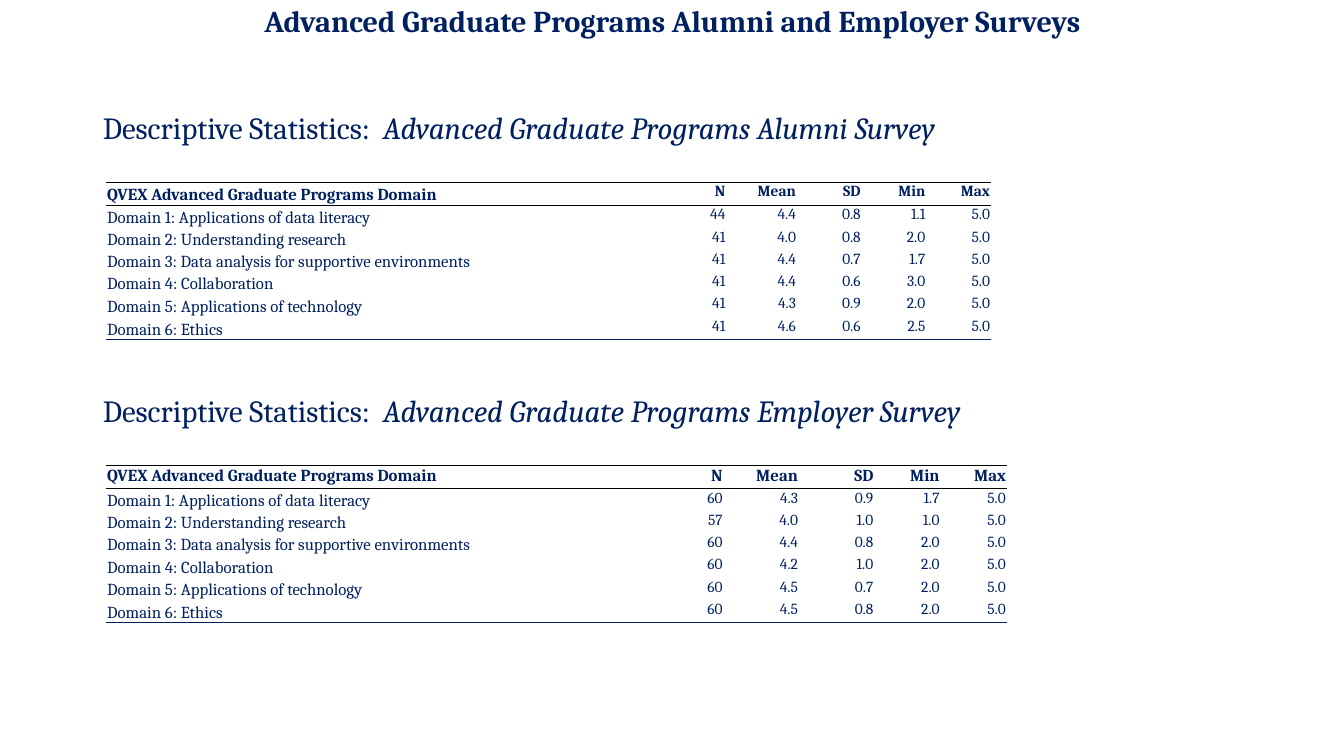
from lxml.etree import SubElement
from pptx import Presentation
from pptx.dml.color import RGBColor
from pptx.enum.text import MSO_ANCHOR, MSO_AUTO_SIZE, PP_ALIGN
from pptx.oxml.ns import qn
from pptx.util import Cm, Pt

NAVY, BLACK = "002060", "000000"
NO_GRID = "{2D5ABB26-0587-4C30-8999-92F81FD0307C}"
DOMAINS = [
    "Domain 1: Applications of data literacy",
    "Domain 2: Understanding research",
    "Domain 3: Data analysis for supportive environments",
    "Domain 4: Collaboration",
    "Domain 5: Applications of technology",
    "Domain 6: Ethics",
]
HEADER = ["QVEX Advanced Graduate Programs Domain", "N", "Mean", "SD", "Min", "Max"]
ALUMNI = [
    (44, 4.4, 0.8, 1.1, 5.0),
    (41, 4.0, 0.8, 2.0, 5.0),
    (41, 4.4, 0.7, 1.7, 5.0),
    (41, 4.4, 0.6, 3.0, 5.0),
    (41, 4.3, 0.9, 2.0, 5.0),
    (41, 4.6, 0.6, 2.5, 5.0),
]
EMPLOYER = [
    (60, 4.3, 0.9, 1.7, 5.0),
    (57, 4.0, 1.0, 1.0, 5.0),
    (60, 4.4, 0.8, 2.0, 5.0),
    (60, 4.2, 1.0, 2.0, 5.0),
    (60, 4.5, 0.7, 2.0, 5.0),
    (60, 4.5, 0.8, 2.0, 5.0),
]


def rgb(value):
    """Turn a hex string into a colour."""
    return RGBColor.from_string(value)


def write(p, text, size=12, font="Cambria", color=NAVY, bold=False, italic=False, align=None):
    """Add a formatted run to a paragraph."""
    r = p.add_run()
    r.text = text
    r.font.size, r.font.name = Pt(size), font
    r.font.bold, r.font.italic = bold, italic
    r.font.color.rgb = rgb(color)
    if align is not None:
        p.alignment = align


def border(cell, side, color):
    """Draw a one-point line on one side of a cell."""
    ln = SubElement(cell._tc.get_or_add_tcPr(), qn(f"a:{side}"), w=str(Pt(1)))
    SubElement(SubElement(ln, qn("a:solidFill")), qn("a:srgbClr"), val=color)


class SurveySlide:
    """Hold the style and the current slide."""

    def __init__(self, prs):
        """Add a title and content slide."""
        self.s = prs.slides.add_slide(prs.slide_layouts[1])

    def place(self, sp, left, top, width, height):
        """Position a placeholder and return its text frame."""
        sp.left, sp.top, sp.width, sp.height = map(Cm, (left, top, width, height))
        tf = sp.text_frame
        tf.word_wrap, tf.auto_size = True, MSO_AUTO_SIZE.NONE
        return tf

    def title(self, text):
        """Fill the title placeholder."""
        tf = self.place(self.s.shapes.title, 2.34, 0.08, 29.21, 1)
        tf.margin_top = tf.margin_bottom = 0
        tf.vertical_anchor = MSO_ANCHOR.MIDDLE
        p = tf.paragraphs[0]
        p.line_spacing = 0.9
        write(p, text, size=21.6, bold=True, align=PP_ALIGN.CENTER)

    def headings(self, surveys):
        """Fill the body placeholder with one heading per survey."""
        tf = self.place(self.s.placeholders[1], 2.34, 2.72, 29.21, 13.92)
        for i, (survey, gap) in enumerate(surveys):
            p = tf.add_paragraph() if i else tf.paragraphs[0]
            p.line_spacing, p.space_before = 0.9, Pt(gap)
            pPr = p._p.get_or_add_pPr()
            pPr.set("marL", "0")
            pPr.set("indent", "0")
            SubElement(pPr, qn("a:buNone"))
            write(p, "Descriptive Statistics:  ", size=22)
            write(p, survey, size=22, italic=True)

    def table(self, top, widths, stats, header_size, header_anchor):
        """Add a table of domain statistics."""
        rows = [HEADER] + [[d, *map(str, v)] for d, v in zip(DOMAINS, stats)]
        last = len(rows) - 1
        heights = [0.58 if i in (0, last) else 0.56 for i in range(len(rows))]
        frame = self.s.shapes.add_table(len(rows), len(HEADER), Cm(2.68), Cm(top),
                                        Cm(sum(widths)), Cm(sum(heights)))
        t = frame.table
        t.first_row = t.horz_banding = False
        t._tbl.tblPr.find(qn("a:tableStyleId")).text = NO_GRID
        for col, width in zip(t.columns, widths):
            col.width = Cm(width)
        for i, values in enumerate(rows):
            t.rows[i].height = Cm(heights[i])
            for j, text in enumerate(values):
                cell = t.cell(i, j)
                cell.margin_left = cell.margin_right = cell.margin_top = Cm(0.02)
                cell.margin_bottom = 0
                label_anchor = MSO_ANCHOR.BOTTOM if i else header_anchor
                cell.vertical_anchor = MSO_ANCHOR.TOP if j else label_anchor
                number_size = 11 if i else header_size
                write(cell.text_frame.paragraphs[0], text, size=number_size if j else 12,
                      bold=i == 0, align=PP_ALIGN.RIGHT if j else PP_ALIGN.LEFT)
                if i == 0:
                    border(cell, "lnT", BLACK)
                if i in (0, last):
                    border(cell, "lnB", NAVY if i else BLACK)
                cell.fill.background()


def main():
    """Build and save the survey slide."""
    prs = Presentation()
    prs.slide_width, prs.slide_height = Cm(33.87), Cm(19.05)
    slide = SurveySlide(prs)
    slide.title("Advanced Graduate Programs Alumni and Employer Surveys")
    slide.headings([("Advanced Graduate Programs Alumni Survey", 10),
                    ("Advanced Graduate Programs Employer Survey", 178.4)])
    slide.table(4.59, [14.05, 1.57, 1.78, 1.63, 1.63, 1.63], ALUMNI, 11, MSO_ANCHOR.BOTTOM)
    slide.table(11.73, [13.87, 1.68, 1.9, 1.9, 1.67, 1.67], EMPLOYER, 12, MSO_ANCHOR.TOP)
    prs.save("out.pptx")


if __name__ == "__main__":
    main()
